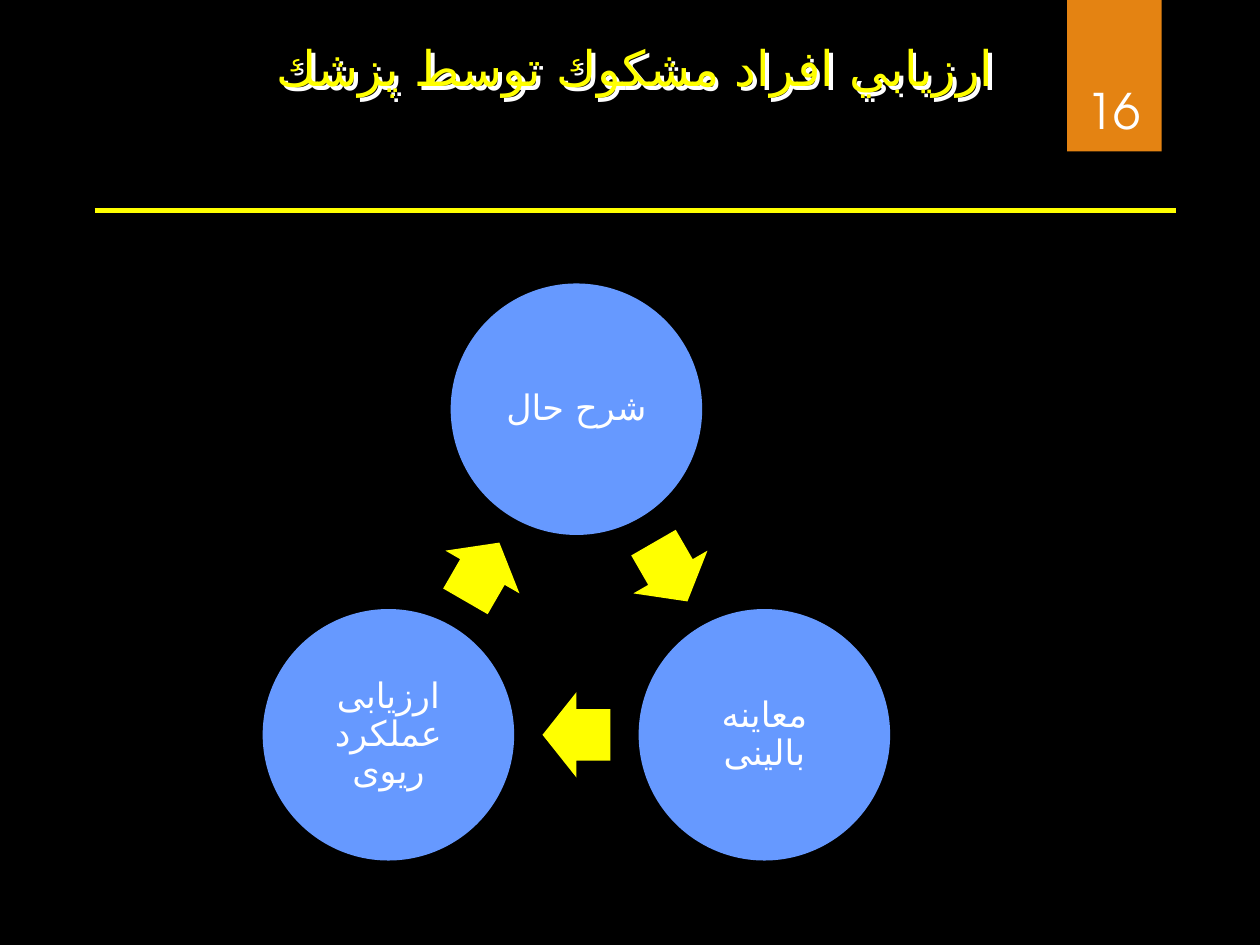
from math import cos, radians, sin

from lxml.etree import SubElement
from pptx import Presentation
from pptx.dml.color import RGBColor
from pptx.enum.shapes import MSO_CONNECTOR, MSO_SHAPE
from pptx.enum.text import MSO_ANCHOR as Anchor, PP_ALIGN as Align
from pptx.oxml.ns import qn
from pptx.util import Inches, Pt

WIDTH, HEIGHT = 10, 7.5
FONT, ARABIC_FONT = "TeX Gyre Adventor", "DejaVu Sans"
COLORS = {"background": "000000", "tab": "E48312", "circle": "6699FF",
          "accent": "FFFF00", "text": "FFFFFF"}
STEPS = ["شرح حال", "معاینه بالینی", "ارزیابی عملکرد ریوی"]


def color(name):
    return RGBColor.from_string(COLORS[name])


def inches(box):
    return [Inches(value) for value in box]


def add_block(slide, kind, box, fill):
    shape = slide.shapes.add_shape(kind, *inches(box))
    shape.shadow.inherit = False
    shape.fill.solid()
    shape.fill.fore_color.rgb = color(fill)
    shape.line.fill.background()
    return shape


def write(shape, text, size=20, fill="text", anchor=Anchor.MIDDLE,
          inset=None, spacing=None, rtl=False):
    frame = shape.text_frame
    frame.word_wrap = True
    frame.vertical_anchor = anchor
    if inset is not None:
        frame.margin_left = frame.margin_right = Inches(inset)
        frame.margin_top = frame.margin_bottom = Inches(inset)
    paragraph = frame.paragraphs[0]
    paragraph.alignment = Align.CENTER
    if spacing:
        paragraph.line_spacing = spacing
    if rtl:
        paragraph._p.get_or_add_pPr().set("rtl", "1")
    run = paragraph.add_run()
    run.text = text
    run.font.size = Pt(size)
    run.font.name = FONT
    run.font.color.rgb = color(fill)
    # Arabic script takes its font from the complex-script entry
    SubElement(run._r.get_or_add_rPr(), qn("a:cs"), typeface=ARABIC_FONT)


def add_white_shadow(shape):
    effects = SubElement(shape._element.spPr, qn("a:effectLst"))
    shadow = SubElement(effects, qn("a:outerShdw"), dist=str(Pt(3)),
                        dir=str(45 * 60000), algn="ctr", rotWithShape="0")
    SubElement(shadow, qn("a:srgbClr"), val=COLORS["text"])


def add_header(slide, box):
    left, top, width, height = box
    # Page tab and number
    add_block(slide, MSO_SHAPE.RECTANGLE,
              (left + 0.847 * width, top, 0.075 * width, 0.72 * height), "tab")
    number = slide.shapes.add_textbox(*inches(
        (left + 0.849 * width, top + 0.19 * height, 0.069 * width, 0.5 * height)))
    write(number, "16", size=28, anchor=Anchor.BOTTOM)
    # Title
    title = slide.shapes.add_textbox(*inches(
        (left + 0.1 * width, top + 0.15 * height, 0.808 * width, 0.7 * height)))
    write(title, "ارزيابي افراد مشكوك توسط پزشك", size=28, fill="accent",
          anchor=Anchor.TOP, rtl=True)
    add_white_shadow(title)
    # Rule under the header
    rule = slide.shapes.add_connector(MSO_CONNECTOR.STRAIGHT, *inches(
        (left + 0.075 * width, top + height, left + 0.933 * width, top + height)))
    rule.line.color.rgb = color("accent")
    rule.line.width = Pt(3)
    SubElement(rule._element.spPr, qn("a:effectLst"))


def add_cycle(slide, box, steps):
    left, top, width, height = box
    diameter = 0.4 * width
    radius = (height - diameter) / 1.5
    center_x, center_y = left + width / 2, top + diameter / 2 + radius
    arrow_width, arrow_height = 0.27 * diameter, 0.34 * diameter
    turn = 360 / len(steps)
    gap_radius = radius * cos(radians(turn / 2))

    def centered(angle, distance, w, h):
        x = center_x + distance * sin(radians(angle))
        y = center_y - distance * cos(radians(angle))
        return x - w / 2, y - h / 2, w, h

    for index, step in enumerate(steps):
        # Circle
        angle = index * turn
        circle = add_block(slide, MSO_SHAPE.OVAL,
                           centered(angle, radius, diameter, diameter), "circle")
        write(circle, step, inset=0.03, spacing=0.9)
        # Arrow to the next circle
        middle = angle + turn / 2
        arrow = add_block(slide, MSO_SHAPE.RIGHT_ARROW,
                          centered(middle, gap_radius, arrow_width, arrow_height),
                          "accent")
        arrow.adjustments[0], arrow.adjustments[1] = 0.6, 0.5
        arrow.rotation = middle


def main():
    presentation = Presentation()
    presentation.slide_width, presentation.slide_height = inches((WIDTH, HEIGHT))
    slide = presentation.slides.add_slide(presentation.slide_layouts[6])
    slide.background.fill.solid()
    slide.background.fill.fore_color.rgb = color("background")
    add_header(slide, (0, 0, WIDTH, 1.67))
    add_cycle(slide, (2.08, 2.25, 4.99, 4.58), STEPS)
    presentation.save("out.pptx")


if __name__ == "__main__":
    main()
